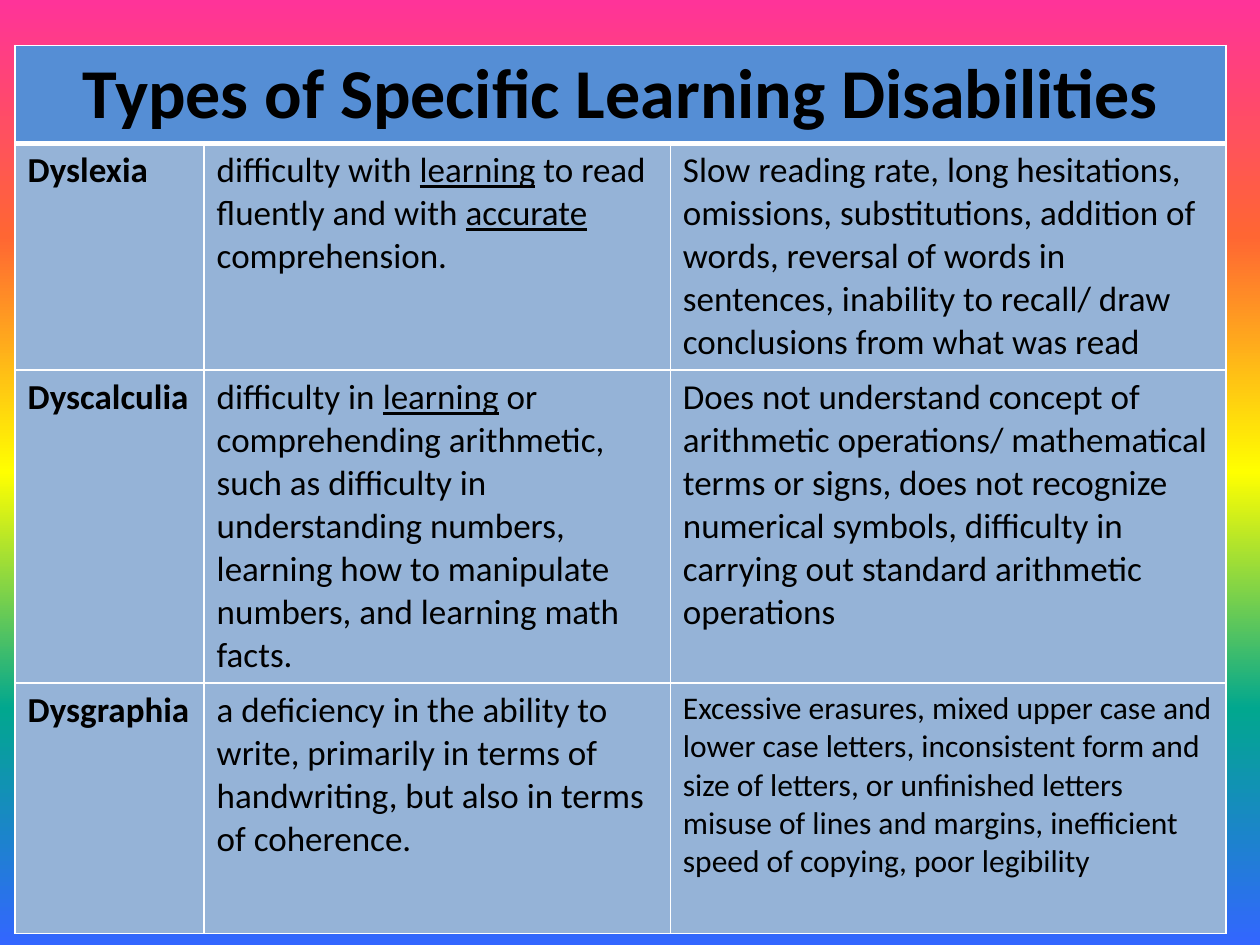
from lxml.etree import SubElement
from pptx import Presentation
from pptx.dml.color import RGBColor
from pptx.enum.text import PP_ALIGN
from pptx.oxml import parse_xml
from pptx.oxml.ns import nsdecls, qn
from pptx.util import Inches, Pt

BLACK = RGBColor(0x00, 0x00, 0x00)
WHITE = RGBColor(0xFF, 0xFF, 0xFF)
HEAD = RGBColor(0x55, 0x8E, 0xD5)
BODY = RGBColor(0x95, 0xB3, 0xD7)
RAINBOW = [
    RGBColor(0xFF, 0x33, 0x99),
    RGBColor(0xFF, 0x66, 0x33),
    RGBColor(0xFF, 0xFF, 0x00),
    RGBColor(0x01, 0xA7, 0x8F),
    RGBColor(0x33, 0x66, 0xFF),
]

TITLE = "Types of Specific Learning Disabilities"
COLS = [1.5, 3.7, 4.41]
ROWS = [0.62, 1.79, 2.45, 1.99]
TYPES = [
    (
        "Dyslexia",
        "difficulty with |learning| to read fluently and with |accurate |comprehension.",
        ["Slow reading rate, long hesitations, omissions, substitutions, addition of "
         "words, reversal of words in sentences, inability to recall/ draw "
         "conclusions from what was read"],
        20,
    ),
    (
        "Dyscalculia",
        "difficulty in |learning| or comprehending arithmetic, such as difficulty in "
        "understanding numbers, learning how to manipulate numbers, and learning "
        "math facts.",
        ["Does not understand concept of arithmetic operations/ mathematical terms "
         "or signs, does not recognize numerical symbols, difficulty in carrying "
         "out standard arithmetic operations"],
        20,
    ),
    (
        "Dysgraphia",
        "a deficiency in the ability to write, primarily in terms of handwriting, "
        "but also in terms of coherence.",
        ["Excessive erasures, mixed upper case and lower case letters, inconsistent "
         "form and size of letters, or unfinished letters",
         "misuse of lines and margins, inefficient speed of copying, poor legibility"],
        18,
    ),
]


def paint_back(slide):
    """Fill the background with a top-to-bottom rainbow."""
    fill = slide.background.fill
    fill.gradient()
    fill.gradient_angle = 270
    stops = slide.element.find(".//" + qn("a:gsLst"))
    for old in list(stops):
        stops.remove(old)
    step = 100000 // (len(RAINBOW) - 1)
    for i, color in enumerate(RAINBOW):
        stop = SubElement(stops, qn("a:gs"), pos=str(i * step))
        SubElement(stop, qn("a:srgbClr"), val=str(color))


def style_cell(cell, color, base=1):
    """Give a cell its fill and white borders, the bottom one of width base."""
    props = cell._tc.get_or_add_tcPr()
    for i, (side, width) in enumerate(zip("LRTB", (1, 1, 1, base))):
        props.insert(i, parse_xml(
            f'<a:ln{side} {nsdecls("a")} w="{Pt(width)}"><a:solidFill>'
            f'<a:srgbClr val="{WHITE}"/></a:solidFill></a:ln{side}>'))
    cell.fill.solid()
    cell.fill.fore_color.rgb = color


def write_cell(cell, lines, size=20, bold=False, align=PP_ALIGN.LEFT):
    """Write one paragraph per line, underlining the parts between bars."""
    frame = cell.text_frame
    for i, line in enumerate(lines):
        para = frame.add_paragraph() if i else frame.paragraphs[0]
        para.alignment = align
        font = para.font
        font.name, font.size, font.bold = "Calibri", Pt(size), bold
        font.color.rgb = BLACK
        for j, part in enumerate(line.split("|")):
            run = para.add_run()
            run.text = part
            if j % 2:
                run.font.underline = True


def add_types(slide, left, top, width, height):
    """Place the table of disabilities in the given box."""
    table = slide.shapes.add_table(
        len(ROWS), len(COLS), left, top, width, height).table
    for col, size in zip(table.columns, COLS):
        col.width = Inches(size)
    for row, size in zip(table.rows, ROWS):
        row.height = Inches(size)
    for i, row in enumerate(table.rows):
        for cell in row.cells:
            style_cell(cell, BODY if i else HEAD, 1 if i else 3)
    title = table.cell(0, 0)
    title.merge(table.cell(0, len(COLS) - 1))
    write_cell(title, [TITLE], 40, True, PP_ALIGN.CENTER)
    for i, (name, about, signs, size) in enumerate(TYPES, 1):
        write_cell(table.cell(i, 0), [name], bold=True)
        write_cell(table.cell(i, 1), [about])
        write_cell(table.cell(i, 2), signs, size)


def main():
    """Build and save the slide."""
    deck = Presentation()
    deck.slide_width, deck.slide_height = Inches(10), Inches(7.5)
    slide = deck.slides.add_slide(deck.slide_layouts[6])
    paint_back(slide)
    add_types(slide, Inches(0.12), Inches(0.36), Inches(9.61), Inches(7))
    deck.save("out.pptx")


if __name__ == "__main__":
    main()
